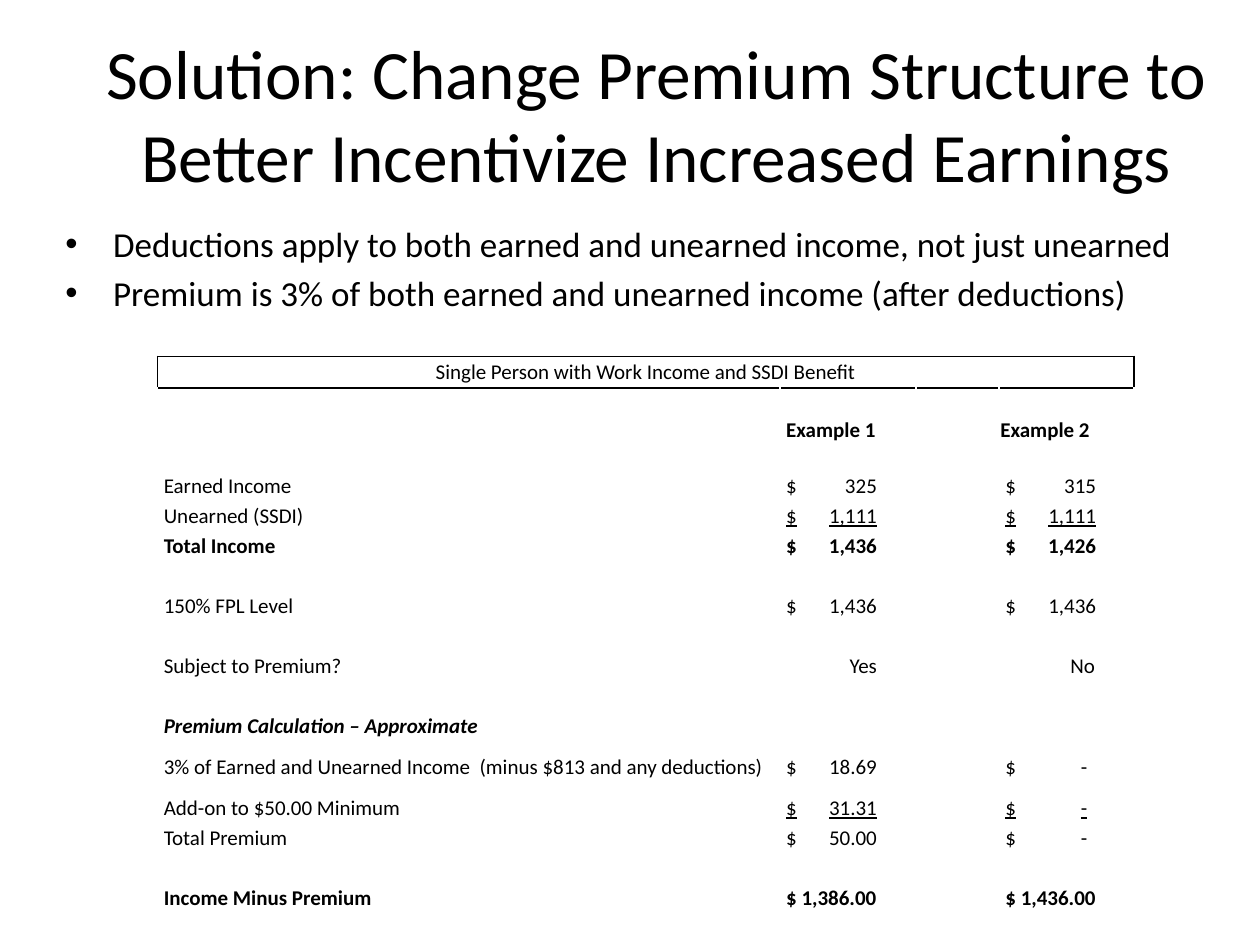
from lxml import etree
from pptx import Presentation
from pptx.dml.color import RGBColor
from pptx.enum.text import MSO_ANCHOR, MSO_AUTO_SIZE, PP_ALIGN
from pptx.oxml.ns import qn
from pptx.util import Inches, Pt

LEFT, MID, RIGHT = PP_ALIGN.LEFT, PP_ALIGN.CENTER, PP_ALIGN.RIGHT
CENTER = MSO_ANCHOR.MIDDLE
FIXED = MSO_AUTO_SIZE.NONE

WIDE, HIGH = 10, 7.5
PAD = 0.01
INDENT = 0.05

TITLE = "Solution: Change Premium Structure to Better Incentivize Increased Earnings"
POINTS = [
    "Deductions apply to both earned and unearned income, not just unearned",
    "Premium is 3% of both earned and unearned income (after deductions)",
]
HEAD = "Single Person with Work Income and SSDI Benefit"

BOLD = {"bold": True}
LINED = {"underline": True}
# Row number: label, first example, second example, label format, value format
ROWS = {
    2: ("", "Example 1", "Example 2", {}, BOLD),
    4: ("Earned Income", "$\t325", "$\t315", {}, {}),
    5: ("Unearned (SSDI)", "$\t1,111", "$\t1,111", {}, LINED),
    6: ("Total Income", "$\t1,436", "$\t1,426", BOLD, BOLD),
    8: ("150% FPL Level", "$\t1,436", "$\t1,436", {}, {}),
    10: ("Subject to Premium?", "Yes", "No", {}, {}),
    12: ("Premium Calculation – Approximate", "", "",
         {"bold": True, "italic": True}, {}),
    13: ("3% of Earned and Unearned Income  (minus $813 and any deductions)",
         "$\t18.69", "$\t-", {}, {}),
    14: ("Add-on to $50.00 Minimum", "$\t31.31", "$\t-", {}, LINED),
    15: ("Total Premium", "$\t50.00", "$\t-", {}, {}),
    17: ("Income Minus Premium", "$ 1,386.00", "$ 1,436.00", BOLD, BOLD),
}
COLS = [4.94, 1.08, 0.66, 1.07]
LINE = (4.42 - 0.25 - 3 * 0.22 - 0.41) / 13
TALL = [0.25] + [0.22] * 3 + [LINE] * 9 + [0.41] + [LINE] * 4


def color(code):
    return RGBColor.from_string(code)


def apply(item, values):
    for name, value in values.items():
        setattr(item, name, value)


def place(x, y, w, h):
    """Turn shares of the slide into lengths."""
    return [Inches(part * side)
            for part, side in zip((x, y, w, h), (WIDE, HIGH, WIDE, HIGH))]


class Deck:
    font = "Calibri"
    ink = "000000"
    paper = "FFFFFF"

    def __init__(self):
        self.file = Presentation()
        apply(self.file, {"slide_width": Inches(WIDE),
                          "slide_height": Inches(HIGH)})
        self.slide = self.file.slides.add_slide(self.file.slide_layouts[5])

    def label(self, para, text, size, align=LEFT, **style):
        para.alignment = align
        run = para.add_run()
        run.text = text
        apply(run.font, {"name": self.font, "size": Pt(size), **style})
        run.font.color.rgb = color(self.ink)

    def title(self, text, box):
        shape = self.slide.shapes.title
        apply(shape, dict(zip(("left", "top", "width", "height"), place(*box))))
        frame = shape.text_frame
        apply(frame, {"word_wrap": True, "auto_size": FIXED,
                      "vertical_anchor": CENTER})
        self.label(frame.paragraphs[0], text, 39.6, MID)

    def bullets(self, items, box):
        frame = self.slide.shapes.add_textbox(*place(*box)).text_frame
        apply(frame, {"word_wrap": True, "margin_top": 0})
        for i, text in enumerate(items):
            para = frame.add_paragraph() if i else frame.paragraphs[0]
            para.space_after = Pt(4)
            self.label(para, text, 20)
            props = para._p.get_or_add_pPr()
            props.set("marL", str(Inches(0.38)))
            props.set("indent", str(-Inches(0.38)))
            etree.SubElement(props, qn("a:buFont")).set("typeface", "Arial")
            etree.SubElement(props, qn("a:buChar")).set("char", "•")

    def edge(self, cell, **sides):
        """Draw the cell's borders, one colour for each side."""
        props = cell._tc.get_or_add_tcPr()
        for i, side in enumerate("LRTB"):
            line = etree.Element(qn("a:ln" + side), w=str(Pt(1)))
            fill = etree.SubElement(line, qn("a:solidFill"))
            etree.SubElement(fill, qn("a:srgbClr")).set(
                "val", sides.get(side, self.paper))
            props.insert(i, line)

    def stop(self, para, at):
        """Set a right tab stop, in inches."""
        tabs = etree.SubElement(para._p.get_or_add_pPr(), qn("a:tabLst"))
        etree.SubElement(tabs, qn("a:tab"), pos=str(Inches(at)), algn="r")

    def grid(self, box, cols, rows):
        table = self.slide.shapes.add_table(
            len(rows), len(cols), *place(*box)).table
        apply(table, {"first_row": False, "horz_banding": False})
        for col, width in zip(table.columns, cols):
            col.width = Inches(width)
        for row, height in zip(table.rows, rows):
            row.height = Inches(height)
        for r, row in enumerate(table.rows):
            for cell in row.cells:
                apply(cell, {"margin_left": Inches(PAD),
                             "margin_right": Inches(PAD),
                             "margin_top": Inches(PAD), "margin_bottom": 0,
                             "vertical_anchor": CENTER})
                cell.fill.background()
                sides = "LRTB" if r == 0 else "T" if r == 1 else ""
                self.edge(cell, **dict.fromkeys(sides, self.ink))
                end = cell.text_frame.paragraphs[0]._p
                etree.SubElement(end, qn("a:endParaRPr")).set("sz", "1200")
        return table

    def entry(self, cell, text, **style):
        """Fill a cell; amounts line up at a tab stop, answers at the right."""
        if not text:
            return
        para = cell.text_frame.paragraphs[0]
        answer = text in ("Yes", "No")
        if text != "Example 2":
            cell.margin_left = Inches(INDENT)
        if answer:
            cell.margin_right = Inches(0.31)
        self.label(para, text, 12, RIGHT if answer else LEFT, **style)
        if "\t" in text:
            self.stop(para, 0.65 if text.endswith("-") else 0.72)


def main():
    deck = Deck()
    deck.title(TITLE, (0.05, 0.04, 0.942, 0.16))
    deck.bullets(POINTS, (0.042, 0.235, 0.9, 0.11))

    table = deck.grid((0.125, 0.377, 0.775, 0.59), COLS, TALL)
    head = table.cell(0, 0)
    head.merge(table.cell(0, 3))
    deck.label(head.text_frame.paragraphs[0], HEAD, 12, MID)
    for r, (name, first, second, look, form) in ROWS.items():
        deck.entry(table.cell(r, 0), name, **look)
        deck.entry(table.cell(r, 1), first, **form)
        deck.entry(table.cell(r, 3), second, **form)

    deck.file.save("out.pptx")


if __name__ == "__main__":
    main()
